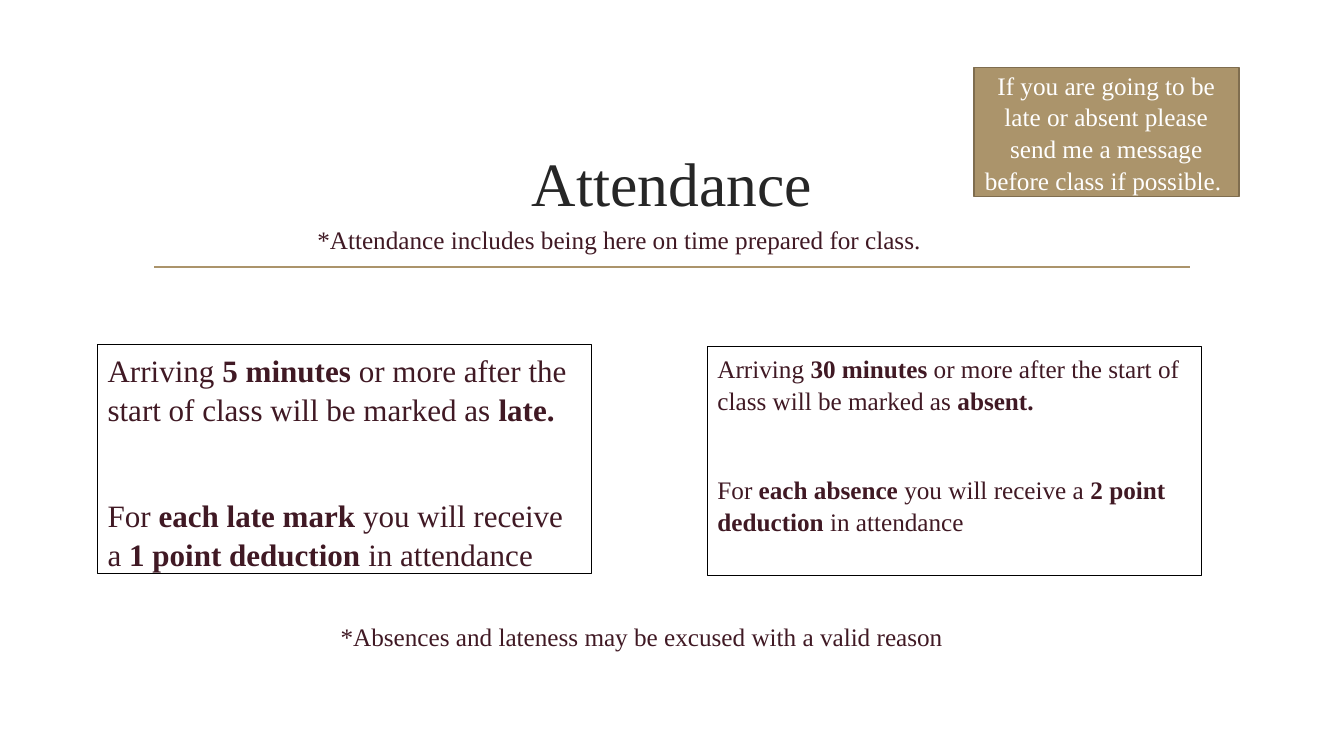
from dataclasses import dataclass
from lxml.etree import SubElement
from pptx import Presentation
from pptx.dml.color import RGBColor as RGB
from pptx.enum.shapes import MSO_CONNECTOR as Link, MSO_SHAPE as Kind
from pptx.enum.text import MSO_ANCHOR as Anchor, PP_ALIGN as Align
from pptx.oxml.ns import qn
from pptx.util import Pt


@dataclass(frozen=True)
class Theme:
    """Hold the colours, font and type sizes of the slide."""
    font: str = "Times New Roman"
    dark: str = "262626"
    plum: str = "401924"
    gold: str = "AB946B"
    edge: str = "7F6D4F"
    black: str = "000000"
    white: str = "FFFFFF"
    title: float = 44
    large: float = 22.2
    body: float = 18
    pitch: float = 1.05


THEME = Theme()


def style(run, size, color, bold=False):
    """Give a run its font, size, colour and weight."""
    font = run.font
    font.name, font.size, font.bold = THEME.font, Pt(size), bold
    font.color.rgb = RGB.from_string(color)


def write(frame, paras, size, color, gap=0, align=Align.LEFT, anchor=Anchor.TOP):
    """Fill a frame with paragraphs whose odd parts, split at |, are bold."""
    frame.word_wrap = True
    frame.vertical_anchor = anchor
    for index, text in enumerate(paras):
        para = frame.add_paragraph() if index else frame.paragraphs[0]
        para.alignment = align
        para.line_spacing = THEME.pitch
        if index:
            para.space_before = Pt(gap)
        for part, words in enumerate(text.split("|")):
            if words:
                run = para.add_run()
                run.text = words
                style(run, size, color, part % 2 == 1)


def head(slide, text, box):
    """Place and format the title."""
    title = slide.shapes.title
    title.left, title.top, title.width, title.height = map(Pt, box)
    write(title.text_frame, [text], THEME.title, THEME.dark,
          align=Align.CENTER, anchor=Anchor.MIDDLE)


def rule(slide, left, right, top):
    """Draw the level line under the title."""
    line = slide.shapes.add_connector(
        Link.STRAIGHT, Pt(left), Pt(top), Pt(right), Pt(top))
    line.line.color.rgb = RGB.from_string(THEME.gold)
    line.line.width = Pt(1.25)
    SubElement(line._element.spPr, qn("a:effectLst"))


def panel(slide, box, edge, width, fill=None):
    """Draw a framed rectangle and return its text frame."""
    shape = slide.shapes.add_shape(Kind.RECTANGLE, *map(Pt, box))
    shape.shadow.inherit = False
    if fill:
        shape.fill.solid()
        shape.fill.fore_color.rgb = RGB.from_string(fill)
    else:
        shape.fill.background()
    shape.line.color.rgb = RGB.from_string(edge)
    shape.line.width = Pt(width)
    return shape.text_frame


def note(slide, text, box):
    """Add a plain line of text."""
    frame = slide.shapes.add_textbox(*map(Pt, box)).text_frame
    write(frame, [text], THEME.body, THEME.plum)


def main():
    """Build the attendance slide."""
    deck = Presentation()
    deck.slide_width, deck.slide_height = Pt(960), Pt(540)
    slide = deck.slides.add_slide(deck.slide_layouts[5])
    rule(slide, 110.2, 850.3, 190.8)
    head(slide, "Attendance", (102.2, 77, 756, 103))
    late = [
        "Arriving |5 minutes |or more after the start of class will be marked as |late.",
        "For |each late mark |you will receive a |1 point deduction |in attendance",
    ]
    absent = [
        "Arriving |30 minutes |or more after the start of class will be marked as |absent.",
        "For |each absence |you will receive a |2 point deduction |in attendance",
    ]
    rules = [(late, 69.8, 246.2, THEME.large, 47.6),
             (absent, 505.4, 247.7, THEME.body, 41.5)]
    for paras, left, top, size, gap in rules:
        frame = panel(slide, (left, top, 352.8, 163.4), THEME.black, 0.75)
        write(frame, paras, size, THEME.plum, gap)
    note(slide, "*Attendance includes being here on time prepared for class.",
         (219.6, 155.5, 521.3, 51.1))
    note(slide, "*Absences and lateness may be excused with a valid reason",
         (236.2, 439.2, 487.4, 51.1))
    call = panel(slide, (695.5, 48.2, 189.4, 92.2), THEME.edge, 1.25, THEME.gold)
    write(call, ["If you are going to be late or absent please send me a message "
                 "before class if possible. "],
          THEME.body, THEME.white, align=Align.CENTER, anchor=Anchor.MIDDLE)
    deck.save("out.pptx")


if __name__ == "__main__":
    main()
